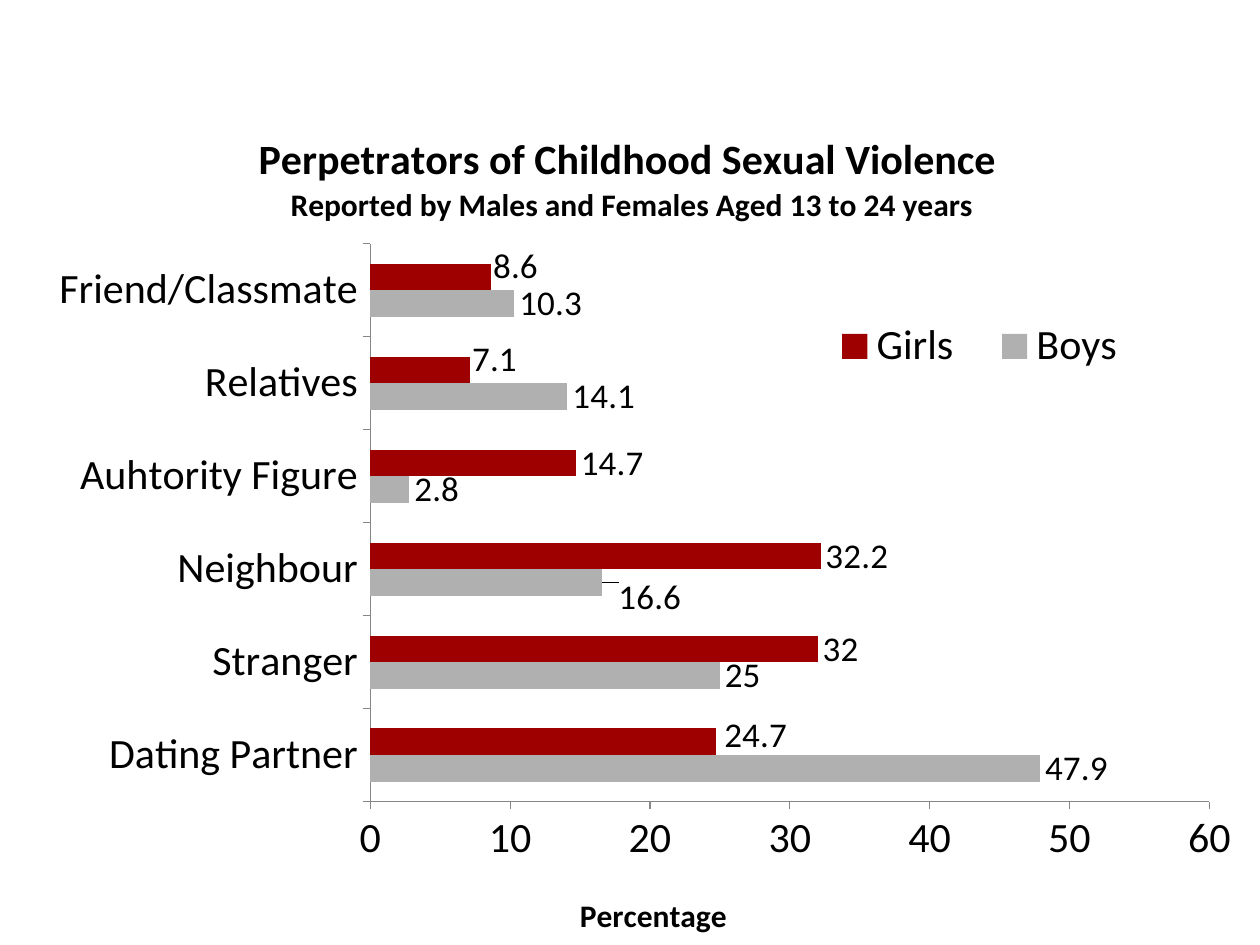
from lxml import etree
from pptx import Presentation
from pptx.chart.data import CategoryChartData
from pptx.dml.color import RGBColor
from pptx.enum.chart import XL_CHART_TYPE, XL_LABEL_POSITION, XL_LEGEND_POSITION, XL_TICK_MARK
from pptx.oxml.ns import qn
from pptx.util import Inches, Pt

COLORS = {"text": "000000", "axis": "868686", "Boys": "B0B0B0", "Girls": "9E0000"}
FONT = "Calibri"
CATEGORIES = ["Dating Partner", "Stranger", "Neighbour",
              "Auhtority Figure", "Relatives", "Friend/Classmate"]
VALUES = {
    "Boys": [47.9, 25, 16.6, 2.8, 14.1, 10.3],
    "Girls": [24.7, 32, 32.2, 14.7, 7.1, 8.6],
}
# Nudged labels: series -> category index -> shift as a share of the chart
LABEL_SHIFTS = {
    "Boys": {2: (0.009, 0.018)},
    "Girls": {0: (0.003, -0.008), 4: (-0.002, -0.013), 5: (-0.002, -0.013)},
}


def style_font(font, size, bold=False):
    font.name, font.size, font.bold = FONT, Pt(size), bold
    font.color.rgb = RGBColor.from_string(COLORS["text"])


def set_layout(element, after=None, **settings):
    """Give a chart element a manual layout, placed after the named child."""
    for old in element.findall(qn("c:layout")):
        element.remove(old)
    layout = etree.Element(qn("c:layout"))
    manual = etree.SubElement(layout, qn("c:manualLayout"))
    for name, value in settings.items():
        etree.SubElement(manual, qn(f"c:{name}")).set("val", str(value))
    if after:
        element.find(qn(f"c:{after}")).addnext(layout)
    else:
        element.insert(0, layout)


def fill_title(title, lines, x, y):
    """Write (text, size) lines into a chart or axis title."""
    frame = title.text_frame
    frame.text = "\n".join(text for text, size in lines)
    for para, (text, size) in zip(frame.paragraphs, lines):
        for span in para.runs:
            style_font(span.font, size, bold=True)
    set_layout(title._element, "tx", xMode="edge", yMode="edge", x=x, y=y)


def style_axes(chart):
    for axis in (chart.category_axis, chart.value_axis):
        axis.has_major_gridlines = False
        axis.major_tick_mark = XL_TICK_MARK.OUTSIDE
        axis.minor_tick_mark = XL_TICK_MARK.NONE
        axis.format.line.color.rgb = RGBColor.from_string(COLORS["axis"])
        axis.format.line.width = Pt(0.75)
        style_font(axis.tick_labels.font, 24)
    scale = chart.value_axis
    scale.minimum_scale, scale.maximum_scale, scale.major_unit = 0, 60, 10
    fill_title(scale.axis_title, [("Percentage", 18)], 0.45, 0.94)


def style_series(series):
    series.format.fill.solid()
    series.format.fill.fore_color.rgb = RGBColor.from_string(COLORS[series.name])
    series.invert_if_negative = False
    labels = series.data_labels
    labels.show_value = True
    labels.position = XL_LABEL_POSITION.OUTSIDE_END
    style_font(labels.font, 20)
    for index, (x, y) in LABEL_SHIFTS[series.name].items():
        label = series.points[index].data_label
        label.position = XL_LABEL_POSITION.OUTSIDE_END
        style_font(label.font, 20)
        element = labels._element.xpath(f"c:dLbl[c:idx/@val='{index}']")[0]
        set_layout(element, "idx", x=x, y=y)


def add_legend(chart):
    chart.has_legend = True
    legend = chart.legend
    legend.position = XL_LEGEND_POSITION.BOTTOM
    legend.include_in_layout = False
    style_font(legend.font, 24)
    set_layout(legend._element, "legendPos", xMode="edge", yMode="edge",
               x=0.64, y=0.25, w=0.28, h=0.08)


def add_perpetrator_chart(slide, left, top, width, height):
    data = CategoryChartData()
    data.categories = CATEGORIES
    for name, values in VALUES.items():
        data.add_series(name, values)
    chart = slide.shapes.add_chart(
        XL_CHART_TYPE.BAR_CLUSTERED, left, top, width, height, data).chart
    style_font(chart.font, 10)
    fill_title(chart.chart_title, [
        ("Perpetrators of Childhood Sexual Violence ", 24),
        ("Reported by Males and Females Aged 13 to 24 years", 18),
    ], 0.19, 0.03)
    plot = chart.plots[0]
    plot.gap_width = 150
    plot.vary_by_categories = False
    for series in plot.series:
        style_series(series)
    style_axes(chart)
    add_legend(chart)
    set_layout(chart.element.xpath(".//c:plotArea")[0], layoutTarget="inner",
               xMode="edge", yMode="edge", x=0.284, y=0.167, w=0.683, h=0.669)


def main():
    deck = Presentation()
    deck.slide_width, deck.slide_height = Inches(10), Inches(7.5)
    slide = deck.slides.add_slide(deck.slide_layouts[6])
    add_perpetrator_chart(slide, Inches(0.17), Inches(0.83), Inches(9.75), Inches(6.67))
    deck.save("out.pptx")


if __name__ == "__main__":
    main()
